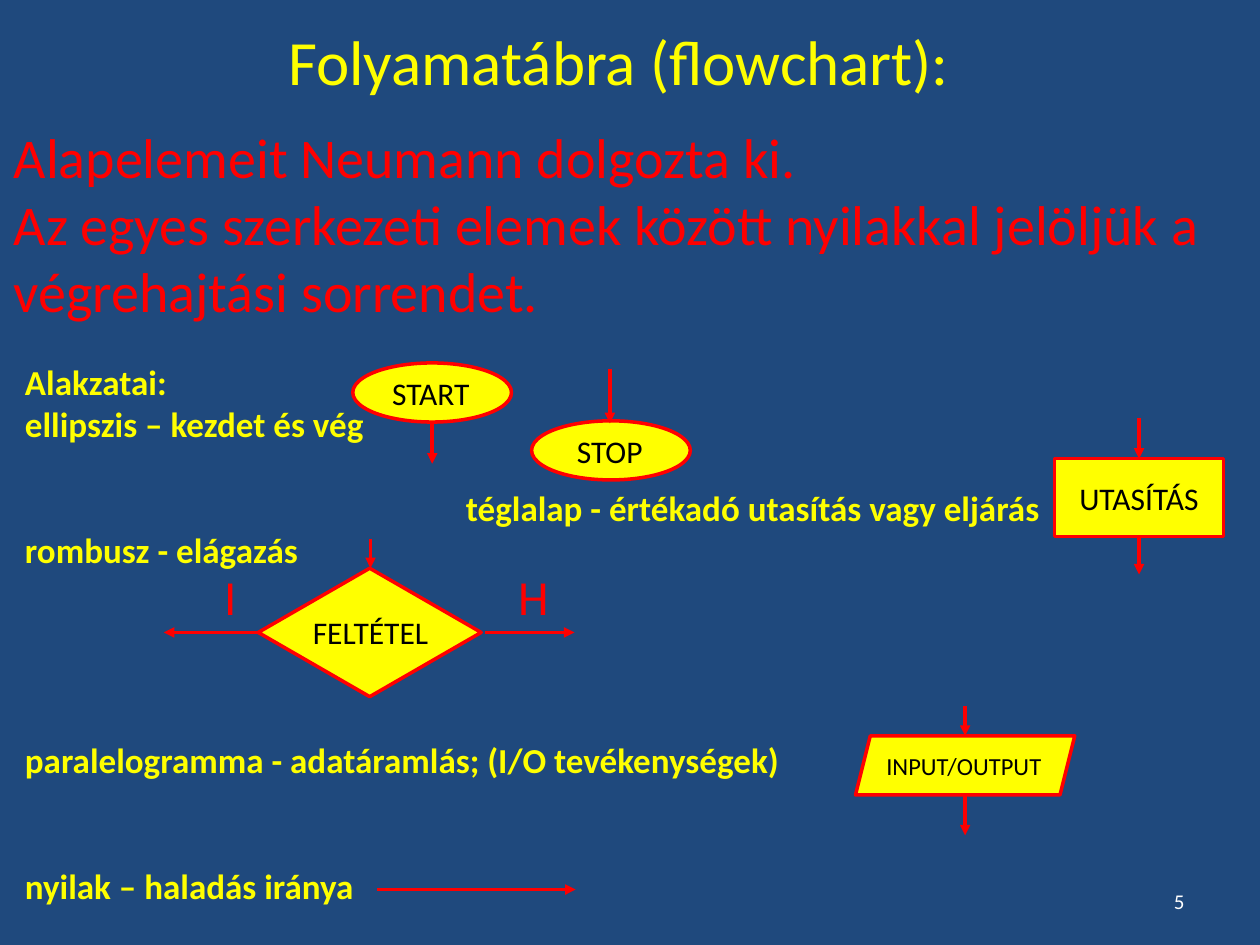
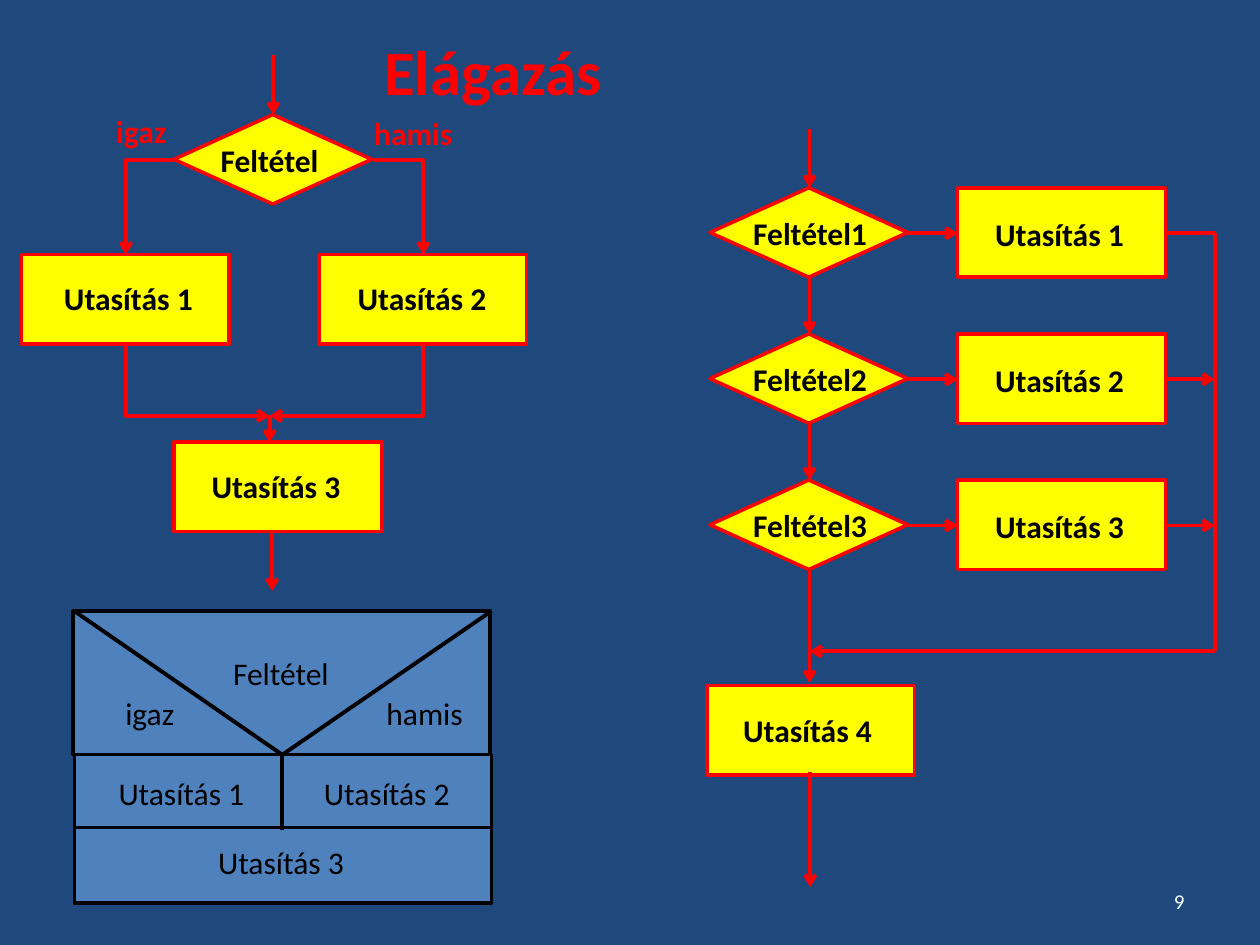
from dataclasses import dataclass
from pptx import Presentation
from pptx import util as u
from pptx.dml.color import RGBColor
from pptx.enum import shapes, text
from pptx.oxml.ns import qn
from lxml import etree

MSO, AL = shapes.MSO_SHAPE, text.PP_ALIGN
Pt = u.Pt


@dataclass(frozen=True)
class Theme:
    font: str = "Calibri"
    back: str = "1F497D"
    yellow: str = "FFFF00"
    red: str = "FF0000"
    black: str = "000000"
    white: str = "FFFFFF"
    blue: str = "4F81BD"
    title: int = 36
    lead: int = 32
    branch: int = 28
    body: int = 20
    label: int = 18
    small: int = 14
    number: int = 12
    outline: float = 2
    line: float = 2.25


T = Theme()

# ---- Content: slide 1, the flowchart symbols ----
SYMBOL_TITLE = "Folyamatábra (flowchart):"
LEAD = ["Alapelemeit Neumann dolgozta ki.",
        "Az egyes szerkezeti elemek között nyilakkal jelöljük a végrehajtási sorrendet."]
# wording, empty lines above, left indent
SYMBOL_LIST = [
    ("Alakzatai:", 0, 0),
    ("ellipszis – kezdet és vég", 0, 0),
    ("téglalap - értékadó utasítás vagy eljárás", 1, 252),
    ("rombusz - elágazás", 0, 0),
    ("paralelogramma - adatáramlás; (I/O tevékenységek)", 4, 0),
    ("nyilak – haladás iránya", 2, 0),
]
BODY_PITCH = 24
# kind, box, label, label box, label size
SYMBOLS = [
    (MSO.OVAL, (201.6, 207.4, 90.7, 33.8), "START", (209.5, 210.2, 73.4, 28.8), T.label),
    (MSO.OVAL, (303.8, 240.5, 90.7, 33.8), "STOP", (314.6, 243.4, 67.7, 28.8), T.label),
    (MSO.RECTANGLE, (602.6, 262.1, 96.5, 44.6), "UTASÍTÁS", (602.6, 270, 96.5, 28.8), T.label),
    (MSO.DIAMOND, (147.6, 324.7, 127.4, 73.4), "FELTÉTEL", (169.2, 347, 85, 28.8), T.label),
    (MSO.PARALLELOGRAM, (488.9, 420.5, 125.3, 33.8), "INPUT/OUTPUT",
     (496.1, 425.5, 109.4, 24.5), T.small),
]
SYMBOL_ARROWS = [
    (277.2, 361.4, 328.3, 361.4), (147.6, 361.4, 93.6, 361.4),
    (650.9, 306.7, 650.9, 328.3), (650.9, 239, 650.9, 262.1),
    (247, 241.9, 247, 265), (348.5, 211, 348.5, 241.9),
    (211.7, 308.2, 211.7, 324.7), (215.3, 508.3, 329, 508.3),
    (551.5, 454.3, 551.5, 477.4), (551.5, 403.2, 551.5, 420.5),
]
BRANCH_LETTERS = [("I", 121), ("H", 289.4)]

# ---- Content: slide 2, branching ----
BRANCH_TITLE = "Elágazás"
DIAMOND, BOX = (113, 51.1), (118.8, 51.1)
LABEL_W, LABEL_H = 90.7, 28.8
# box position, label, label position
TWO_WAY_BOXES = [
    ((12.2, 145.4), "Utasítás 1", (29.5, 156.2)),
    ((182.2, 145.4), "Utasítás 2", (197.3, 156.2)),
    ((99.4, 252.7), "Utasítás 3", (113.8, 263.5)),
]
TWO_WAY_ARROWS = [(156.2, 31.7, 156.2, 65.5), (155.5, 303.8, 155.5, 337.7),
                  (154.1, 237.6, 154.1, 252.7)]
# route, whether it leaves vertically
TWO_WAY_ELBOWS = [
    ((213.1, 91.4, 241.9, 145.4), False), ((241.9, 195.8, 154.1, 237.6), True),
    ((99.4, 91.4, 72, 145.4), False), ((72, 195.8, 154.1, 237.6), True),
]
TWO_WAY_SIDES = [("igaz", (52.6, 60.5, 56.2, 28.8)), ("hamis", (204.5, 61.9, 63.4, 28.8))]
CHAIN = [("Feltétel1", "Utasítás 1"), ("Feltétel2", "Utasítás 2"), ("Feltétel3", "Utasítás 3")]
CHAIN_TOP, CHAIN_STEP = 107.3, 83.5
CHAIN_X, RAIL_X, JOIN_Y = 462.6, 694.1, 372.2
STRUCTOGRAM_BOXES = [(41.8, 349.2, 238.3, 82.1), (42.5, 431.3, 238.3, 43.2),
                     (42.5, 473, 238.3, 43.2)]
STRUCTOGRAM_LINES = [(42.5, 349.2, 161.3, 431.3), (280.8, 349.2, 161.3, 431.3),
                     (161.3, 431.3, 161.3, 474.5)]
STRUCTOGRAM_LABELS = [
    ("Feltétel", 108.7, 370), ("igaz", 33.8, 393), ("hamis", 190.8, 393),
    ("Utasítás 1", 51.8, 438.5), ("Utasítás 2", 169.2, 438.5), ("Utasítás 3", 108.7, 478),
]


# ---- Helpers ----
def rgb(value):
    return RGBColor.from_string(value)


def pts(values):
    return [Pt(v) for v in values]


def add_text(s, lines, box, size, color, bold=False, align=AL.LEFT, wrap=True):
    """Write one paragraph per line and return the text frame."""
    tf = s.shapes.add_textbox(*pts(box)).text_frame
    tf.word_wrap = wrap
    for i, line in enumerate(lines):
        p = tf.paragraphs[0] if i == 0 else tf.add_paragraph()
        p.alignment = align
        r = p.add_run()
        r.text = line
        r.font.name, r.font.size, r.font.bold = T.font, Pt(size), bold
        r.font.color.rgb = rgb(color)
    return tf


def add_label(s, wording, box, size=T.label, color=T.black, bold=False, align=AL.CENTER):
    add_text(s, [wording], box, size, color, bold, align)


def add_block(s, kind, box, fill=T.yellow, line=T.red):
    sp = s.shapes.add_shape(kind, *pts(box))
    sp.shadow.inherit = False
    sp.fill.solid()
    sp.fill.fore_color.rgb = rgb(fill)
    sp.line.color.rgb = rgb(line)
    sp.line.width = Pt(T.outline)


def add_line(s, route, head="arrow", color=T.red, width=T.line,
             kind=shapes.MSO_CONNECTOR.STRAIGHT):
    c = s.shapes.add_connector(kind, *pts(route))
    c.line.color.rgb = rgb(color)
    c.line.width = Pt(width)
    if head:
        etree.SubElement(c.line._get_or_add_ln(), qn("a:tailEnd"), type=head)
    etree.SubElement(c._element.spPr, qn("a:effectLst"))
    return c


def add_elbow(s, route, vertical_first):
    """One-corner connector; a vertical start needs a turned frame."""
    x1, y1, x2, y2 = route
    turn = 0
    if vertical_first:
        cx, cy = (x1 + x2) / 2, (y1 + y2) / 2
        half_w, half_h = (y2 - y1) / 2, abs(x2 - x1) / 2
        turn = 270 if x2 > x1 else 90
        if turn == 270:
            half_w = -half_w
        route = (cx - half_w, cy - half_h, cx + half_w, cy + half_h)
    c = add_line(s, route, kind=shapes.MSO_CONNECTOR.ELBOW)
    spPr = c._element.spPr
    spPr.find(qn("a:prstGeom")).set("prst", "bentConnector2")
    if turn:
        spPr.find(qn("a:xfrm")).set("rot", str(turn * 60000))


def new_slide(prs, number):
    s = prs.slides.add_slide(prs.slide_layouts[6])
    s.background.fill.solid()
    s.background.fill.fore_color.rgb = rgb(T.back)
    tf = add_text(s, [number], (516.2, 500.4, 167.8, 28.8), T.number, T.white, align=AL.RIGHT)
    tf.vertical_anchor = text.MSO_ANCHOR.MIDDLE
    return s


# ---- Slides ----
def symbols_slide(prs):
    s = new_slide(prs, "5")
    add_text(s, [SYMBOL_TITLE], (155.5, 9.4, 396, 51), T.title, T.yellow,
             align=AL.CENTER, wrap=False)
    add_text(s, LEAD, (0.7, 66.2, 704.9, 123.8), T.lead, T.red)

    tf = add_text(s, [row[0] for row in SYMBOL_LIST], (7.2, 202.3, 712.8, 337),
                  T.body, T.yellow, bold=True)
    for p, (_, gap, indent) in zip(tf.paragraphs, SYMBOL_LIST):
        p.space_before = Pt(gap * BODY_PITCH)
        pPr = p._p.get_or_add_pPr()
        pPr.set("marL", str(Pt(indent)))
        pPr.set("indent", "0")

    for kind, box, wording, label_box, size in SYMBOLS:
        add_block(s, kind, box)
        add_label(s, wording, label_box, size)
    for route in SYMBOL_ARROWS:
        add_line(s, route, head="triangle", width=T.outline)
    for letter, x in BRANCH_LETTERS:
        add_label(s, letter, (x, 320.4, 34, 41), T.branch, T.red, align=AL.LEFT)


def two_way(s):
    add_block(s, MSO.DIAMOND, (99.4, 65.5, *DIAMOND))
    add_label(s, "Feltétel", (108.7, 77, LABEL_W, LABEL_H), bold=True)
    for at, wording, label_at in TWO_WAY_BOXES:
        add_block(s, MSO.RECTANGLE, (*at, *BOX))
        add_label(s, wording, (*label_at, LABEL_W, LABEL_H), bold=True, align=AL.LEFT)
    for route in TWO_WAY_ARROWS:
        add_line(s, route)
    for route, vertical_first in TWO_WAY_ELBOWS:
        add_elbow(s, route, vertical_first)
    for wording, box in TWO_WAY_SIDES:
        add_label(s, wording, box, color=T.red, bold=True)


def condition_chain(s):
    for i, (condition, action) in enumerate(CHAIN):
        y = CHAIN_TOP + i * CHAIN_STEP
        mid = y + 26
        add_block(s, MSO.DIAMOND, (405.7, y, *DIAMOND))
        add_block(s, MSO.RECTANGLE, (547.2, y, *BOX))
        add_label(s, condition, (417.6, y + 11.5, LABEL_W, LABEL_H), bold=True)
        add_label(s, action, (561.6, y + 12, LABEL_W, LABEL_H), bold=True, align=AL.LEFT)
        add_line(s, (CHAIN_X, y - 33.8, CHAIN_X, y))
        add_line(s, (518.4, mid, 547.2, mid))
        add_line(s, (666, mid, RAIL_X, mid), head="arrow" if i else None)

    # Common exit
    add_line(s, (RAIL_X, CHAIN_TOP + 26, RAIL_X, JOIN_Y), head=None)
    add_line(s, (RAIL_X, JOIN_Y, CHAIN_X, JOIN_Y))
    add_line(s, (CHAIN_X, 325.4, CHAIN_X, 390.2))
    add_block(s, MSO.RECTANGLE, (403.9, 391.7, *BOX))
    add_label(s, "Utasítás 4", (417.6, 402.5, LABEL_W, LABEL_H), bold=True, align=AL.LEFT)
    add_line(s, (463, 441.4, 463, 506.9))


def structogram(s):
    for box in STRUCTOGRAM_BOXES:
        add_block(s, MSO.RECTANGLE, box, T.blue, T.black)
    for route in STRUCTOGRAM_LINES:
        add_line(s, route, head=None, color=T.black)
    for wording, x, y in STRUCTOGRAM_LABELS:
        add_label(s, wording, (x, y, 103.7, LABEL_H))


def branching_slide(prs):
    s = new_slide(prs, "9")
    add_text(s, [BRANCH_TITLE], (212.4, 15.1, 203.8, 51), T.title, T.red, bold=True)
    two_way(s)
    condition_chain(s)
    structogram(s)


def main():
    prs = Presentation()
    prs.slide_width, prs.slide_height = Pt(720), Pt(540)
    symbols_slide(prs)
    branching_slide(prs)
    prs.save("out.pptx")


if __name__ == "__main__":
    main()
